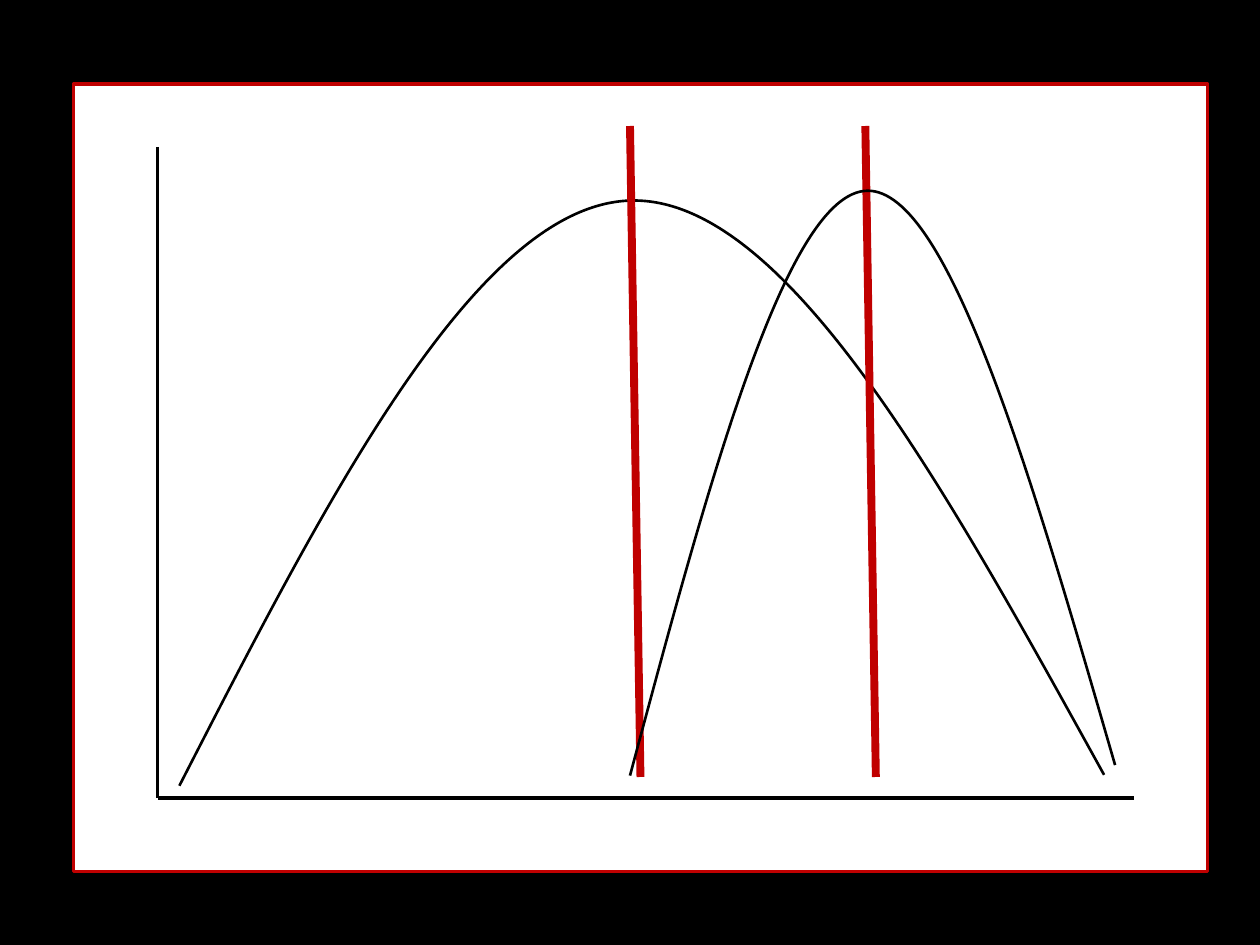
"""Draw two overlapping bell curves, each with a red line near its peak."""
from lxml import etree
from pptx import Presentation
from pptx.dml.color import RGBColor
from pptx.enum.shapes import MSO_CONNECTOR as Connector, MSO_SHAPE as Shape
from pptx.oxml.ns import qn
from pptx.util import Pt

BLACK, RED, WHITE = "000000", "C00000", "FFFFFF"


def color(value):
    return RGBColor.from_string(value)


def add_line(page, start, end, shade, width):
    line = page.shapes.add_connector(Connector.STRAIGHT, *map(Pt, start + end))
    line.line.color.rgb = color(shade)
    line.line.width = Pt(width)
    etree.SubElement(line._element.spPr, qn("a:effectLst"))


deck = Presentation()
deck.slide_width, deck.slide_height = Pt(720), Pt(540)
page = deck.slides.add_slide(deck.slide_layouts[6])
page.background.fill.solid()
page.background.fill.fore_color.rgb = color(BLACK)

frame = page.shapes.add_shape(Shape.RECTANGLE, Pt(42), Pt(48), Pt(648), Pt(450))
frame.shadow.inherit = False
frame.fill.solid()
frame.fill.fore_color.rgb = color(WHITE)
frame.line.color.rgb = color(RED)
frame.line.width = Pt(2)

origin = (90, 456)
add_line(page, (90, 84), origin, BLACK, 2.25)
add_line(page, (648, 456), origin, BLACK, 2.25)

wide_curve = [(102.5, 449), (188, 282.3), (273.6, 115.6), (361.5, 114.6),
              (449.3, 113.6), (540, 278.3), (630.9, 442.8)]
narrow_curve = [(360, 443.2), (404.6, 276.5), (449.3, 110), (495.5, 109),
                (542, 108), (589.5, 272.6), (637.2, 437.2)]

for curve, marker_xs in [(wide_curve, (360, 494.5)), (narrow_curve, ())]:
    builder = page.shapes.build_freeform(*map(Pt, curve[0]))
    builder.add_line_segments([(Pt(x), Pt(y)) for x, y in curve[1:]], close=False)
    bell = builder.convert_to_shape()
    bell.shadow.inherit = False
    bell.fill.background()
    bell.line.color.rgb = color(BLACK)
    bell.line.width = Pt(1.5)

    outline = next(bell._element.iter(qn("a:moveTo"))).getparent()
    segments = outline.findall(qn("a:lnTo"))
    for first in range(0, len(segments), 3):
        bezier = etree.SubElement(outline, qn("a:cubicBezTo"))
        for segment in segments[first:first + 3]:
            bezier.append(segment[0])
            outline.remove(segment)

    for x in marker_xs:
        add_line(page, (x, 72), (x + 6, 444), RED, 4.5)

deck.save("out.pptx")
